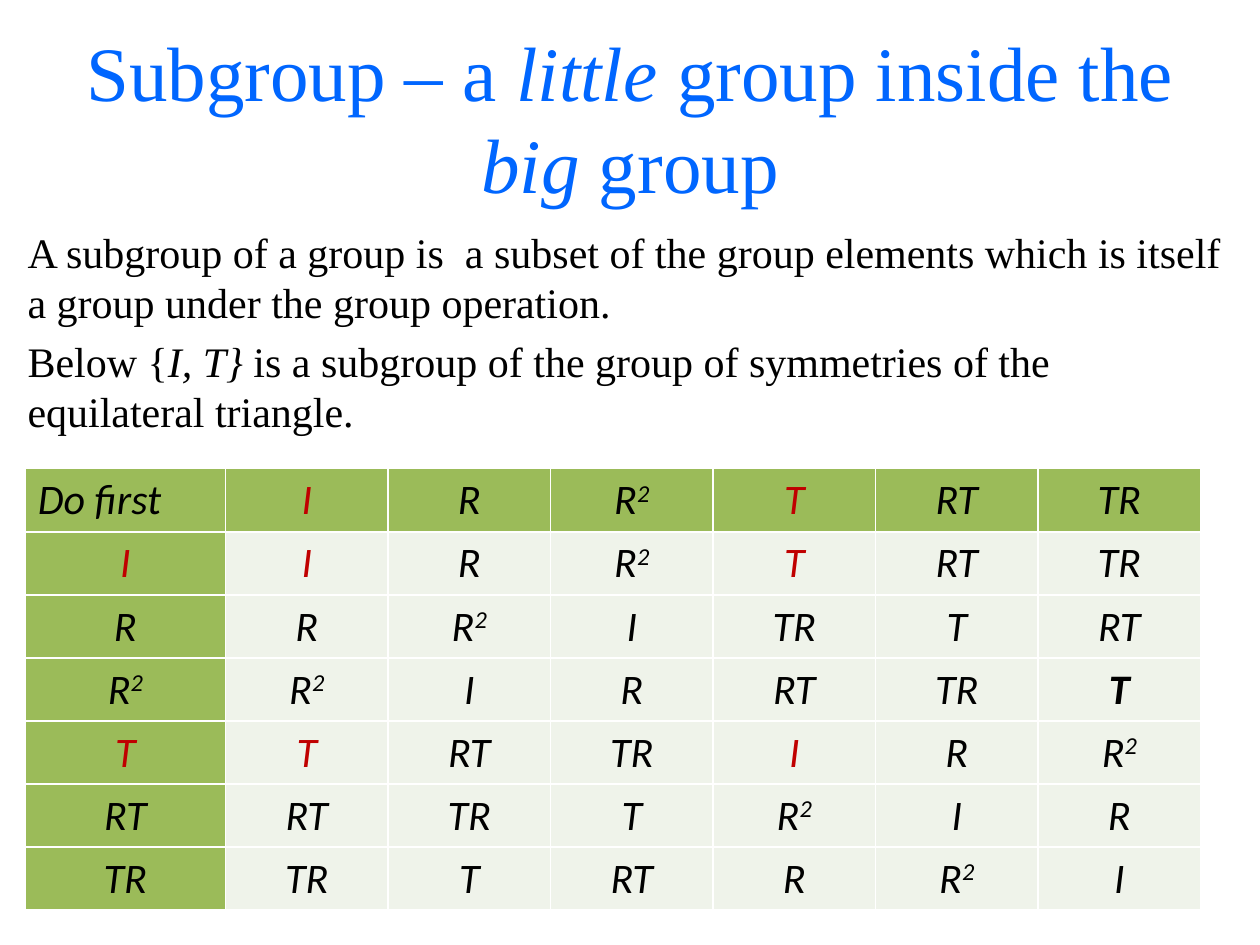
"""Build a slide that defines a subgroup and shows one in a Cayley table."""
import pptx
import pptx.dml.color
import pptx.enum.text
import pptx.util

THEME = {
    "title": {"name": "Times New Roman", "size": 44, "color": "0066FF"},
    "body": {"name": "Times New Roman", "size": 24, "color": "000000"},
    "cell": {"name": "Calibri", "size": 24, "color": "000000", "italic": True, "bold": False},
    "subgroup": "C00000",
    "header_fill": "9BBB59",
    "cell_fill": "EFF3EA",
}
ALIGN = pptx.enum.text.PP_ALIGN
ANCHOR = pptx.enum.text.MSO_ANCHOR

TITLE = [("Subgroup – a ", {}), ("little", {"italic": True}), (" group inside the ", {}),
         ("big", {"italic": True}), (" group", {})]
BODY = [
    [("A subgroup of a group is  a subset of the group elements "
      "which is itself a group under the group operation.", {})],
    [("Below {", {}), ("I, T} ", {"italic": True}),
     ("is a subgroup of the group of symmetries of the equilateral triangle.", {})],
]
ELEMENTS = ["I", "R", "R2", "T", "RT", "TR"]
PRODUCTS = [
    "I R R2 T RT TR",
    "R R2 I TR T RT",
    "R2 I R RT TR T",
    "T RT TR I R R2",
    "RT TR T R2 I R",
    "TR T RT R R2 I",
]
SUBGROUP_LINES = {0, ELEMENTS.index("I") + 1, ELEMENTS.index("T") + 1}
BOLD_CELL = (ELEMENTS.index("R2") + 1, ELEMENTS.index("TR") + 1)

presentation = pptx.Presentation()
presentation.slide_width = pptx.util.Inches(10)
presentation.slide_height = pptx.util.Inches(7.5)
slide = presentation.slides.add_slide(presentation.slide_layouts[6])


def place(left, top, width, height):
    """Turn shares of the slide into lengths."""
    wide, high = presentation.slide_width, presentation.slide_height
    return int(left * wide), int(top * high), int(width * wide), int(height * high)


def write(paragraph, runs, style):
    """Add runs in a base style, each with its own changes."""
    for text, changes in runs:
        run = paragraph.add_run()
        run.text = text
        for key, value in {**style, **changes}.items():
            if key == "color":
                run.font.color.rgb = pptx.dml.color.RGBColor.from_string(value)
            elif key == "baseline":
                run.font._element.set("baseline", value)
            else:
                setattr(run.font, key, pptx.util.Pt(value) if key == "size" else value)


text_blocks = [
    ("title", place(0.05, 0.04, 0.9, 0.167), [TITLE], ANCHOR.MIDDLE, ALIGN.CENTER, 0),
    ("body", place(0.012, 0.233, 0.969, 0.75), BODY, ANCHOR.TOP, ALIGN.LEFT, 0.2),
]
for name, box, paragraphs, anchor, alignment, gap in text_blocks:
    frame = slide.shapes.add_textbox(*box).text_frame
    for key, value in {"word_wrap": True, "vertical_anchor": anchor}.items():
        setattr(frame, key, value)
    for index, runs in enumerate(paragraphs):
        paragraph = frame.add_paragraph() if index else frame.paragraphs[0]
        paragraph.alignment = alignment
        paragraph.space_before = pptx.util.Pt(gap * THEME[name]["size"])
        write(paragraph, runs, THEME[name])

grid = [["Do first", *ELEMENTS]]
grid += [[element, *row.split()] for element, row in zip(ELEMENTS, PRODUCTS)]
size = len(grid)
table = slide.shapes.add_table(size, size, *place(0.02, 0.496, 0.933, 0.467)).table
for index, column in enumerate(table.columns):
    column.width = int((0.129 if index else 0.159) * presentation.slide_width)

for row_index, row in enumerate(grid):
    for column_index, text in enumerate(row):
        position = (row_index, column_index)
        cell = table.cell(*position)
        cell.fill.solid()
        fill = THEME["cell_fill" if all(position) else "header_fill"]
        cell.fill.fore_color.rgb = pptx.dml.color.RGBColor.from_string(fill)
        style = {**THEME["cell"], "bold": position == BOLD_CELL}
        if any(position) and SUBGROUP_LINES.issuperset(position):
            style["color"] = THEME["subgroup"]
        runs = [(text.removesuffix("2"), {})]
        if text.endswith("2"):
            runs.append(("2", {"baseline": "30000"}))
        paragraph = cell.text_frame.paragraphs[0]
        paragraph.alignment = ALIGN.CENTER if any(position) else ALIGN.LEFT
        write(paragraph, runs, style)

presentation.save("out.pptx")
